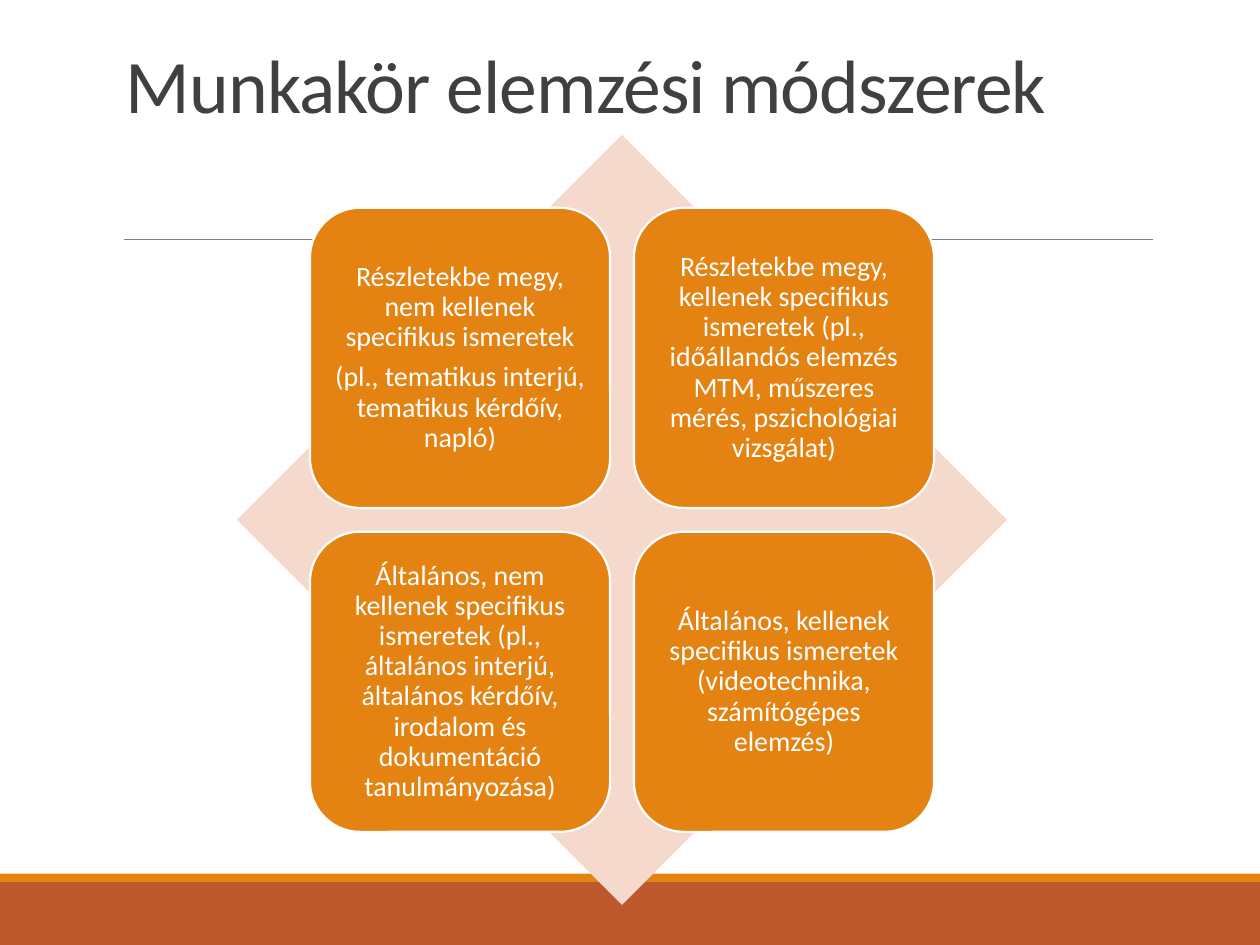
from pptx import Presentation
from pptx.dml.color import RGBColor
from pptx.enum import shapes, text
from pptx.oxml import parse_xml
from pptx.oxml.ns import nsdecls
from pptx.util import Cm, Pt

RUST = RGBColor(0xBD, 0x58, 0x2C)
ORANGE = RGBColor(0xE4, 0x83, 0x12)
PEACH = RGBColor(0xF5, 0xD9, 0xCC)
WHITE = RGBColor(0xFF, 0xFF, 0xFF)
GREY = RGBColor(0x80, 0x80, 0x80)
DARK = RGBColor(0x40, 0x40, 0x40)
FONT = "Calibri"

TITLE = "Munkakör elemzési módszerek"
METHODS = [
    [
        ["Részletekbe megy, nem kellenek specifikus ismeretek",
         "(pl., tematikus interjú, tematikus kérdőív, napló)"],
        ["Részletekbe megy, kellenek specifikus ismeretek (pl., időállandós "
         "elemzés MTM, műszeres mérés, pszichológiai vizsgálat)"],
    ],
    [
        ["Általános, nem kellenek specifikus ismeretek (pl., általános interjú, "
         "általános kérdőív, irodalom és dokumentáció tanulmányozása)"],
        ["Általános, kellenek specifikus ismeretek (videotechnika, "
         "számítógépes elemzés)"],
    ],
]

# Lengths in centimetres
WIDTH, HEIGHT = 25.4, 19.05
FOOTER_TOP, STRIPE = 17.78, 0.17
CENTER_X, CENTER_Y = 12.54, 10.48
DIAMOND = 15.52
CARD, GAP = 6.05, 0.48
INSET = 0.17


def add_filled(slide, kind, left, top, width, height, color):
    shape = slide.shapes.add_shape(kind, Cm(left), Cm(top), Cm(width), Cm(height))
    shape.shadow.inherit = False
    shape.fill.solid()
    shape.fill.fore_color.rgb = color
    shape.line.fill.background()
    return shape


def add_run(paragraph, words, size, color):
    run = paragraph.add_run()
    run.text = words
    run.font.name = FONT
    run.font.size = Pt(size)
    run.font.color.rgb = color
    return run


def add_background(slide):
    rectangle = shapes.MSO_SHAPE.RECTANGLE
    add_filled(slide, rectangle, 0, FOOTER_TOP, WIDTH, HEIGHT - FOOTER_TOP, RUST)
    add_filled(slide, rectangle, 0, FOOTER_TOP - STRIPE, WIDTH, STRIPE, ORANGE)
    rule = slide.shapes.add_connector(
        shapes.MSO_CONNECTOR.STRAIGHT, Cm(2.49), Cm(4.83), Cm(23.24), Cm(4.83))
    rule.line.color.rgb = GREY
    rule.line.width = Pt(0.5)
    rule._element.spPr.append(parse_xml(f"<a:effectLst {nsdecls('a')}/>"))


def add_title(slide):
    box = slide.shapes.add_textbox(Cm(2.29), Cm(0.79), Cm(20.96), Cm(1.93))
    frame = box.text_frame
    frame.word_wrap = True
    frame.vertical_anchor = text.MSO_ANCHOR.BOTTOM
    paragraph = frame.paragraphs[0]
    paragraph.line_spacing = 0.85
    run = add_run(paragraph, TITLE, 43.2, DARK)
    run._r.get_or_add_rPr().set("spc", "-50")


def add_card(slide, left, top, paragraphs):
    card = add_filled(slide, shapes.MSO_SHAPE.ROUNDED_RECTANGLE,
                      left, top, CARD, CARD, ORANGE)
    card.line.color.rgb = WHITE
    card.line.width = Pt(1.25)
    frame = card.text_frame
    frame.word_wrap = True
    frame.vertical_anchor = text.MSO_ANCHOR.MIDDLE
    frame.margin_left = frame.margin_right = Cm(INSET)
    frame.margin_top = frame.margin_bottom = Cm(INSET)
    for index, words in enumerate(paragraphs):
        paragraph = frame.add_paragraph() if index else frame.paragraphs[0]
        paragraph.alignment = text.PP_ALIGN.CENTER
        paragraph.line_spacing = 0.9
        paragraph.space_after = Pt(5.6)
        add_run(paragraph, words, 16, WHITE)


def add_matrix(slide):
    add_filled(slide, shapes.MSO_SHAPE.DIAMOND, CENTER_X - DIAMOND / 2,
               CENTER_Y - DIAMOND / 2, DIAMOND, DIAMOND, PEACH)
    pitch = CARD + GAP
    left = CENTER_X - GAP / 2 - CARD
    top = CENTER_Y - GAP / 2 - CARD
    for row, cards in enumerate(METHODS):
        for column, paragraphs in enumerate(cards):
            add_card(slide, left + column * pitch, top + row * pitch, paragraphs)


def main():
    presentation = Presentation()
    presentation.slide_width = Cm(WIDTH)
    presentation.slide_height = Cm(HEIGHT)
    slide = presentation.slides.add_slide(presentation.slide_layouts[6])
    add_background(slide)
    add_title(slide)
    add_matrix(slide)
    presentation.save("out.pptx")


if __name__ == "__main__":
    main()
